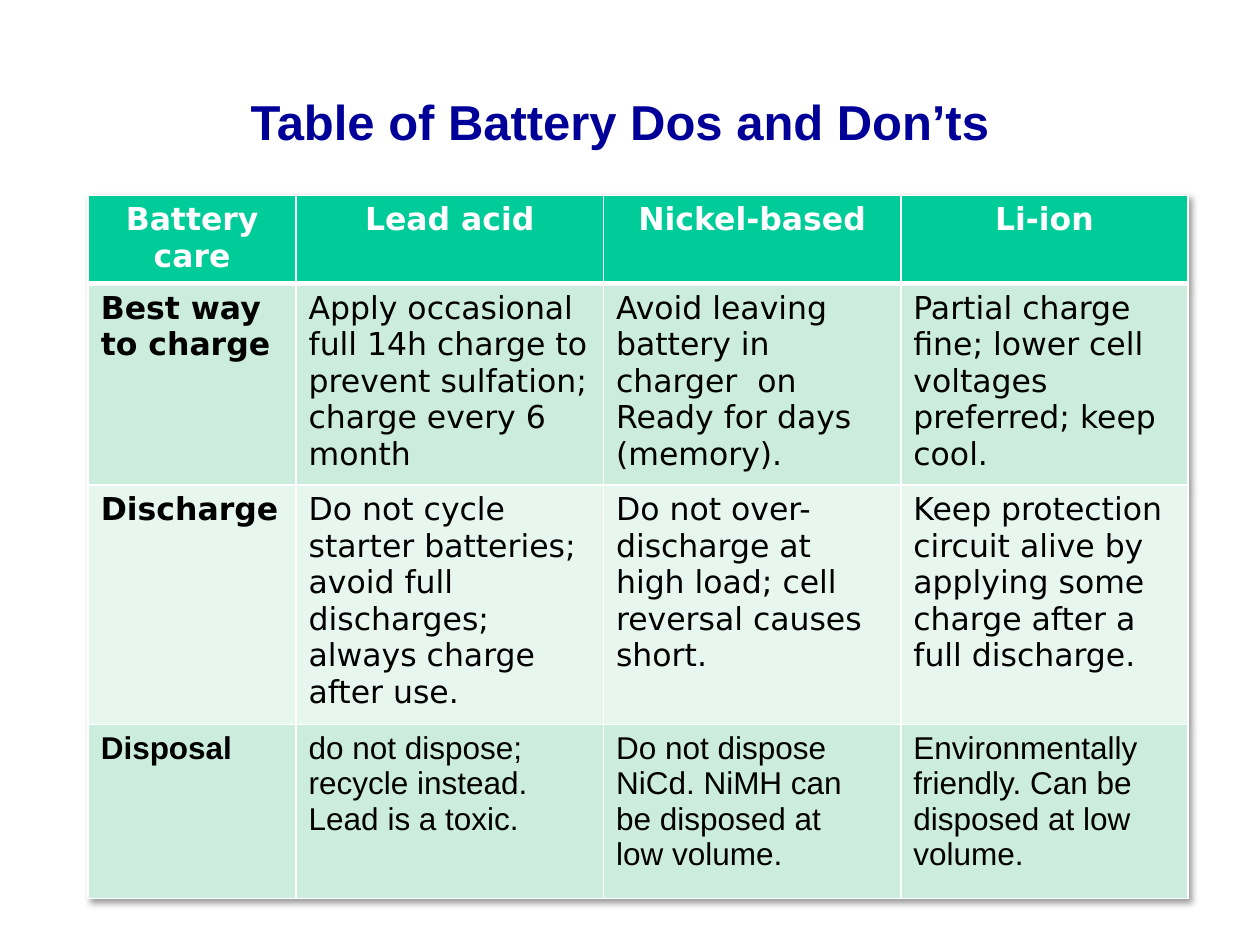
import dataclasses

import pptx
import pptx.dml.color
import pptx.enum.text
import pptx.oxml
import pptx.oxml.ns
import pptx.util

Inches = pptx.util.Inches
ALIGN = pptx.enum.text.PP_ALIGN


@dataclasses.dataclass(frozen=True)
class Theme:
    title: str = "000099"
    header: str = "00CC99"
    bands: tuple = ("CCECDE", "E7F6EF")
    light: str = "FFFFFF"
    dark: str = "000000"
    title_size: int = 28
    table_size: int = 18
    title_font: str = "Arial"
    table_font: str = "DejaVu Sans"
    border: int = 1
    header_border: int = 3


COLUMN_WIDTHS = (1.65, 2.44, 2.36, 2.28)
ROW_HEIGHTS = (0.55, 1.34, 1.26, 1.38)
BATTERY_CARE = (
    ("Battery care", "Lead acid", "Nickel-based", "Li-ion"),
    (
        "Best way\nto charge",
        "Apply occasional full 14h charge to prevent sulfation; charge every 6 month",
        "Avoid leaving battery in charger  on Ready for days (memory).",
        "Partial charge fine; lower cell voltages preferred; keep cool.",
    ),
    (
        "Discharge",
        "Do not cycle starter batteries; avoid full discharges; always charge after use.",
        "Do not over-discharge at high load; cell reversal causes short.",
        "Keep protection circuit alive by applying some charge after a full discharge.",
    ),
    (
        "Disposal",
        "do not dispose; recycle instead. Lead is a toxic.",
        "Do not dispose NiCd. NiMH can\nbe disposed at\nlow volume.",
        "Environmentally friendly. Can be disposed at low volume.",
    ),
)


class SlideBuilder:
    def __init__(self, slide, theme):
        self.slide = slide
        self.theme = theme

    def fill_text(self, text_frame, text, color, alignment=ALIGN.LEFT, **font_format):
        paragraph = text_frame.paragraphs[0]
        paragraph.text = text
        paragraph.alignment = alignment
        for run in paragraph.runs:
            for name, value in font_format.items():
                setattr(run.font, name, value)
            run.font.color.rgb = pptx.dml.color.RGBColor.from_string(color)

    def title(self, text, left, top, width, height):
        shape = self.slide.shapes.add_textbox(
            Inches(left), Inches(top), Inches(width), Inches(height))
        shape.text_frame.word_wrap = False
        self.fill_text(shape.text_frame, text, self.theme.title, bold=True,
                       name=self.theme.title_font,
                       size=pptx.util.Pt(self.theme.title_size))

    def border(self, cell, side, width):
        cell._tc.get_or_add_tcPr().append(pptx.oxml.parse_xml(
            f'<a:ln{side} {pptx.oxml.ns.nsdecls("a")} w="{pptx.util.Pt(width)}">'
            f'<a:solidFill><a:srgbClr val="{self.theme.light}"/></a:solidFill>'
            f'</a:ln{side}>'))

    def cell(self, cell, text, row, column):
        theme = self.theme
        is_header = row == 0
        heavy_side = {0: "B", 1: "T"}.get(row)
        for side in "LRTB":
            self.border(cell, side,
                        theme.header_border if side == heavy_side else theme.border)
        cell.fill.solid()
        fill = theme.header if is_header else theme.bands[(row - 1) % 2]
        cell.fill.fore_color.rgb = pptx.dml.color.RGBColor.from_string(fill)
        is_last = row == len(BATTERY_CARE) - 1
        self.fill_text(cell.text_frame, text,
                       theme.light if is_header else theme.dark,
                       ALIGN.CENTER if is_header else ALIGN.LEFT,
                       bold=is_header or column == 0,
                       name=theme.title_font if is_last else theme.table_font,
                       size=pptx.util.Pt(theme.table_size))

    def table_shadow(self, table):
        table._tbl.tblPr.insert(0, pptx.oxml.parse_xml(
            f'<a:effectLst {pptx.oxml.ns.nsdecls("a")}>'
            '<a:outerShdw blurRad="50800" dist="38100" dir="2700000" algn="tl" '
            f'rotWithShape="0"><a:srgbClr val="{self.theme.dark}">'
            '<a:alpha val="40000"/></a:srgbClr></a:outerShdw></a:effectLst>'))

    def table(self, rows, left, top):
        table = self.slide.shapes.add_table(
            len(rows), len(COLUMN_WIDTHS), Inches(left), Inches(top),
            Inches(sum(COLUMN_WIDTHS)), Inches(sum(ROW_HEIGHTS))).table
        self.table_shadow(table)
        for column, width in zip(table.columns, COLUMN_WIDTHS):
            column.width = Inches(width)
        for table_row, height in zip(table.rows, ROW_HEIGHTS):
            table_row.height = Inches(height)
        for row, texts in enumerate(rows):
            for column, text in enumerate(texts):
                self.cell(table.cell(row, column), text, row, column)


def main():
    presentation = pptx.Presentation()
    presentation.slide_width = Inches(10)
    presentation.slide_height = Inches(7.5)
    slide = presentation.slides.add_slide(presentation.slide_layouts[6])
    builder = SlideBuilder(slide, Theme())
    builder.title("Table of Battery Dos and Don’ts", 1.89, 0.68, 6.36, 0.57)
    builder.table(BATTERY_CARE, 0.7, 1.55)
    presentation.save("out.pptx")


if __name__ == "__main__":
    main()
